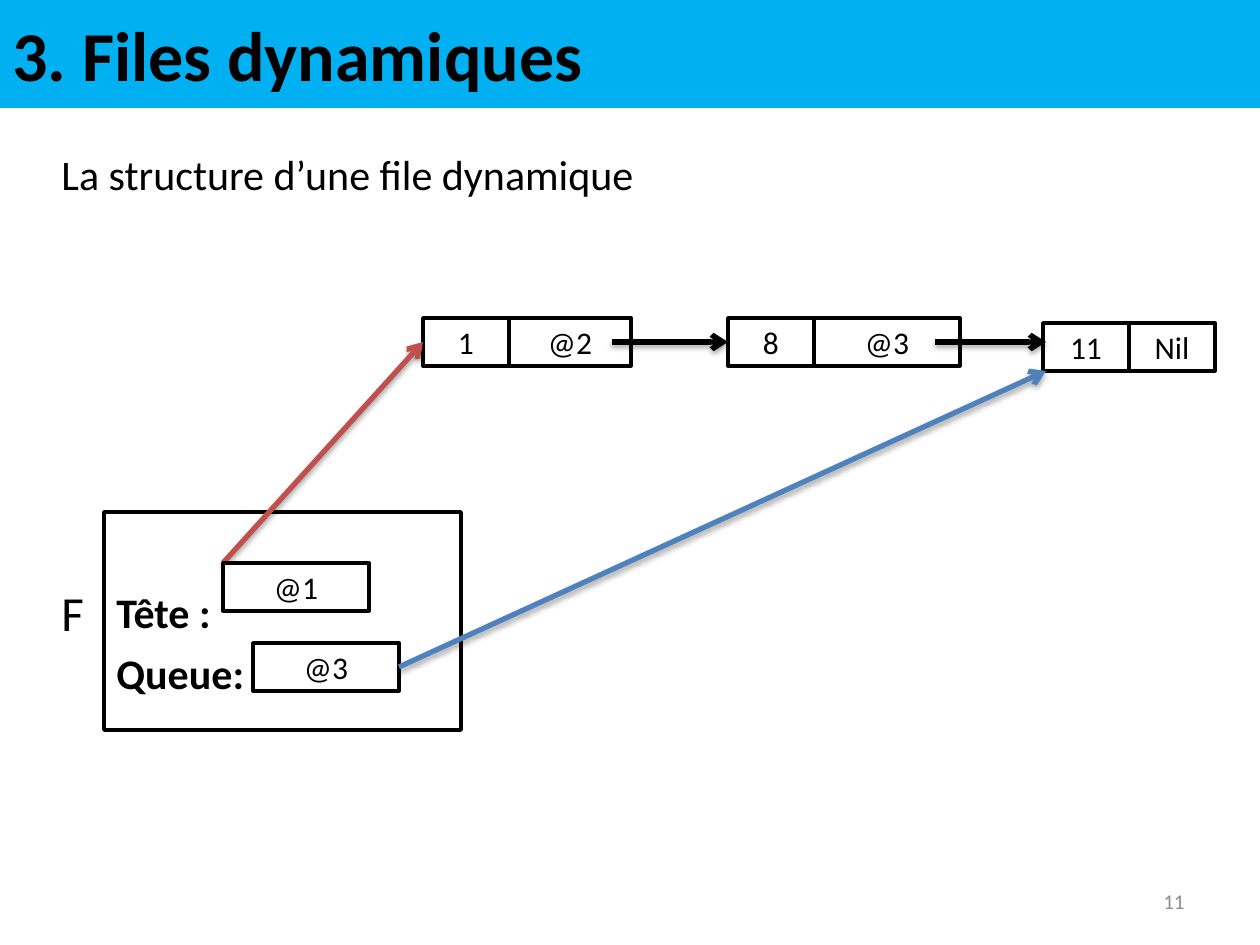
from typing import NamedTuple

from lxml import etree
from pptx import Presentation
from pptx.dml.color import RGBColor
from pptx.enum.shapes import MSO_CONNECTOR, MSO_SHAPE
from pptx.enum.text import MSO_ANCHOR, PP_ALIGN
from pptx.oxml.ns import qn
from pptx.util import Emu, Pt

RECT = MSO_SHAPE.RECTANGLE
STRAIGHT = MSO_CONNECTOR.STRAIGHT
TOP, MIDDLE, BOTTOM = MSO_ANCHOR.TOP, MSO_ANCHOR.MIDDLE, MSO_ANCHOR.BOTTOM
LEFT, CENTER, RIGHT = PP_ALIGN.LEFT, PP_ALIGN.CENTER, PP_ALIGN.RIGHT
LEFT_SIDE, RIGHT_SIDE = 1, 3

BLACK = RGBColor(0x00, 0x00, 0x00)
WHITE = RGBColor(0xFF, 0xFF, 0xFF)
SKY = RGBColor(0x00, 0xB0, 0xF0)
GRAY = RGBColor(0x8C, 0x8C, 0x8C)
RED = RGBColor(0xC0, 0x50, 0x4D)
BLUE = RGBColor(0x4F, 0x81, 0xBD)

PX_PER_INCH = 126
FONT = "Calibri"
CELL_H = 48
VALUE_W = 86
SLOT_W = 146


class Box(NamedTuple):
    x: int
    y: int
    w: int
    h: int


class Node(NamedTuple):
    x: int
    y: int
    value: str
    link: str
    link_w: int


class Arrow(NamedTuple):
    start: tuple[int, int]
    end: tuple[int, int]
    color: RGBColor


NODES = [
    Node(423, 318, "1", "@2", 122),
    Node(728, 318, "8", "@3", SLOT_W),
    Node(1043, 323, "11", "Nil", VALUE_W),
]
FRAME = Box(104, 512, 357, 218)
HEAD_SLOT = Box(223, 563, SLOT_W, CELL_H)
TAIL_SLOT = Box(253, 643, SLOT_W, CELL_H)

FIRST_LINK = Arrow((612, 342), (728, 342), BLACK)
SECOND_LINK = Arrow((935, 342), (1046, 342), BLACK)
HEAD_LINK = Arrow((223, 563), (423, 342), RED)
TAIL_LINK = Arrow((399, 667), (1046, 371), BLUE)


def px(n: int) -> Emu:
    return Emu(round(n * 914400 / PX_PER_INCH))


def set_text(sp, *lines: str, size: int, color=BLACK, bold=False, align=LEFT,
             anchor=MIDDLE, wrap=True, space_after=0) -> None:
    tf = sp.text_frame
    tf.word_wrap = wrap
    tf.vertical_anchor = anchor
    for i, line in enumerate(lines):
        p = tf.paragraphs[0] if i == 0 else tf.add_paragraph()
        p.alignment = align
        if i < len(lines) - 1:
            p.space_after = Pt(space_after)
        r = p.add_run()
        r.text = line
        r.font.name = FONT
        r.font.size = Pt(size)
        r.font.bold = bold
        r.font.color.rgb = color


def add_label(slide, box: Box, text: str, **fmt):
    sp = slide.shapes.add_textbox(*map(px, box))
    set_text(sp, text, **fmt)
    return sp


def add_rect(slide, box: Box, fill=WHITE, outlined=True):
    sp = slide.shapes.add_shape(RECT, *map(px, box))
    sp.shadow.inherit = False
    sp.fill.solid()
    sp.fill.fore_color.rgb = fill
    if outlined:
        sp.line.color.rgb = BLACK
        sp.line.width = Pt(2)
    else:
        sp.line.fill.background()
    return sp


def add_cell(slide, box: Box, text: str):
    sp = add_rect(slide, box)
    set_text(sp, text, size=18, align=CENTER)
    return sp


def add_node(slide, node: Node):
    """Draw a value cell and its link cell; return the value cell."""
    value = add_cell(slide, Box(node.x, node.y, VALUE_W, CELL_H), node.value)
    add_cell(slide, Box(node.x + VALUE_W, node.y, node.link_w, CELL_H), node.link)
    return value


def add_arrow(slide, arrow: Arrow, source=None, target=None) -> None:
    """Draw an arrow, joined to the source's right and the target's left side."""
    cx = slide.shapes.add_connector(STRAIGHT, *map(px, arrow.start + arrow.end))
    if source is not None:
        cx.begin_connect(source, RIGHT_SIDE)
    if target is not None:
        cx.end_connect(target, LEFT_SIDE)
    cx.line.color.rgb = arrow.color
    cx.line.width = Pt(3)
    etree.SubElement(cx.line._get_or_add_ln(), qn("a:tailEnd"), type="arrow")
    effects = etree.SubElement(cx._element.spPr, qn("a:effectLst"))
    shadow = etree.SubElement(effects, qn("a:outerShdw"), blurRad="40000",
                              dist="23000", dir="5400000", rotWithShape="0")
    tint = etree.SubElement(shadow, qn("a:srgbClr"), val=str(BLACK))
    etree.SubElement(tint, qn("a:alpha"), val="35000")


def main() -> None:
    prs = Presentation()
    prs.slide_width, prs.slide_height = px(1260), px(945)
    slide = prs.slides.add_slide(prs.slide_layouts[6])

    banner = add_rect(slide, Box(0, 0, 1260, 108), SKY, outlined=False)
    set_text(banner, "3. Files dynamiques", size=40, bold=True)
    add_label(slide, Box(49, 142, 1142, 64), "La structure d’une file dynamique",
              size=24, anchor=TOP)
    add_label(slide, Box(49, 576, 50, 72), "F", size=28, anchor=TOP)
    add_label(slide, Box(903, 876, 294, 50), "11", size=12, color=GRAY, align=RIGHT)

    frame = add_rect(slide, FRAME)
    frame.text_frame.margin_bottom = px(32)
    set_text(frame, "Tête :", "Queue:", size=24, bold=True, anchor=BOTTOM,
             wrap=False, space_after=6)

    first, second, _ = [add_node(slide, node) for node in NODES]
    add_arrow(slide, FIRST_LINK, target=second)
    add_arrow(slide, SECOND_LINK)
    add_arrow(slide, HEAD_LINK, target=first)
    tail = add_cell(slide, TAIL_SLOT, "@3")
    add_cell(slide, HEAD_SLOT, "@1")
    add_arrow(slide, TAIL_LINK, source=tail)

    prs.save("out.pptx")


if __name__ == "__main__":
    main()
